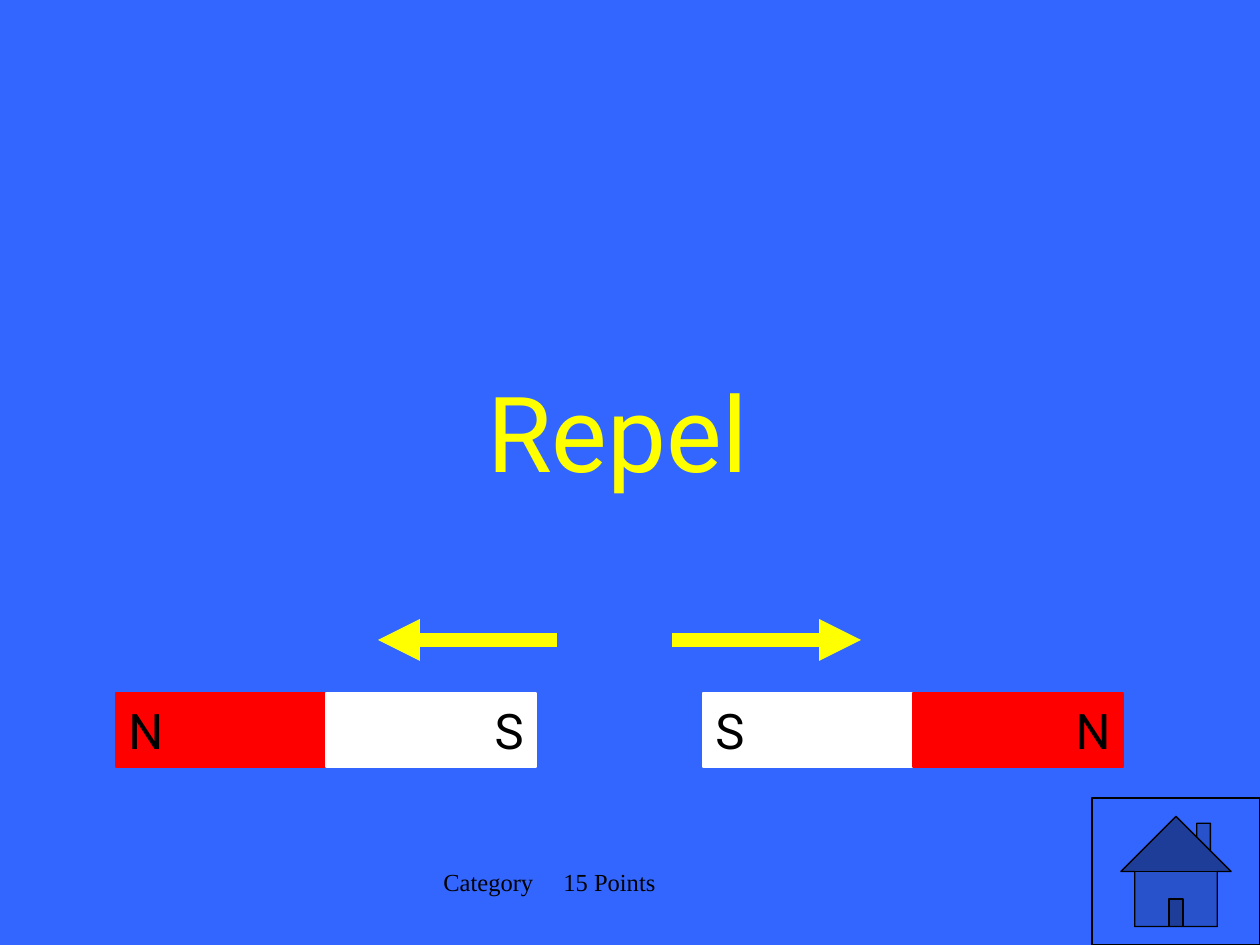
from lxml import etree
from pptx import Presentation
from pptx.dml.color import RGBColor
from pptx.enum.shapes import MSO_CONNECTOR, MSO_SHAPE
from pptx.enum.text import MSO_ANCHOR, MSO_AUTO_SIZE, PP_ALIGN
from pptx.oxml.ns import qn
from pptx.util import Emu, Pt

RECT, HOME = MSO_SHAPE.RECTANGLE, MSO_SHAPE.ACTION_BUTTON_HOME
STRAIGHT = MSO_CONNECTOR.STRAIGHT
LEFT, CENTER, RIGHT = PP_ALIGN.LEFT, PP_ALIGN.CENTER, PP_ALIGN.RIGHT
TOP, MIDDLE = MSO_ANCHOR.TOP, MSO_ANCHOR.MIDDLE
NO_FIT = MSO_AUTO_SIZE.NONE

BLUE = RGBColor(0x33, 0x66, 0xFF)
YELLOW = RGBColor(0xFF, 0xFF, 0x00)
RED = RGBColor(0xFF, 0x00, 0x00)
WHITE = RGBColor(0xFF, 0xFF, 0xFF)
BLACK = RGBColor(0x00, 0x00, 0x00)

SANS, SERIF = "Roboto", "Times New Roman"
EMU_PER_PX = 914400 / 126


def px(n):
    return Emu(round(n * EMU_PER_PX))


class Board:
    """Holds the style and the current slide."""

    styles = {
        "title": {"name": SANS, "size": Pt(60), "color": YELLOW},
        "pole": {"name": SANS, "size": Pt(28), "color": BLACK},
        "footer": {"name": SERIF, "size": Pt(14), "color": BLACK},
    }

    def __init__(self, slide):
        self.slide = slide
        fill = slide.background.fill
        fill.solid()
        fill.fore_color.rgb = BLUE

    def set_text(self, sp, text, style, align=LEFT, anchor=MIDDLE, wrap=True):
        tf = sp.text_frame
        frame = {"auto_size": NO_FIT, "word_wrap": wrap, "vertical_anchor": anchor}
        for key, value in frame.items():
            setattr(tf, key, value)
        p = tf.paragraphs[0]
        p.alignment = align
        r = p.add_run()
        r.text = text
        for key, value in self.styles[style].items():
            if key == "color":
                r.font.color.rgb = value
            else:
                setattr(r.font, key, value)
        return p

    def title(self, text, x, y, w, h):
        sp = self.slide.shapes.title
        sp.left, sp.top, sp.width, sp.height = map(px, (x, y, w, h))
        self.set_text(sp, text, "title", CENTER)

    def tabbed_text(self, text, x, y, w, h, tab):
        sp = self.slide.shapes.add_textbox(*map(px, (x, y, w, h)))
        p = self.set_text(sp, text, "footer", anchor=TOP)
        tabs = etree.SubElement(p._p.get_or_add_pPr(), qn("a:tabLst"))
        etree.SubElement(tabs, qn("a:tab"), pos=str(px(tab)), algn="l")

    def shape(self, kind, x, y, w, h, fill, line, parent=None):
        shapes = (parent or self.slide).shapes
        sp = shapes.add_shape(kind, *map(px, (x, y, w, h)))
        sp.shadow.inherit = False
        sp.fill.solid()
        sp.fill.fore_color.rgb = fill
        sp.line.color.rgb = line
        sp.line.width = Pt(0.75)
        return sp

    def magnet(self, x, y, w, h, poles):
        group = self.slide.shapes.add_group_shape()
        for i, (pole, align) in enumerate(zip(poles, (LEFT, RIGHT))):
            fill = RED if pole == "N" else WHITE
            sp = self.shape(RECT, x + i * w, y, w, h, fill, fill, group)
            self.set_text(sp, pole, "pole", align, wrap=False)

    def arrow(self, x1, x2, y):
        s = self.slide.shapes.add_connector(STRAIGHT, *map(px, (x1, y, x2, y)))
        s.line.color.rgb = YELLOW
        s.line.width = Pt(8)
        ln = s._element.spPr.find(qn("a:ln"))
        etree.SubElement(ln, qn("a:tailEnd"), type="triangle")
        etree.SubElement(s._element.spPr, qn("a:effectLst"))


def main():
    prs = Presentation()
    prs.slide_width, prs.slide_height = px(1260), px(945)
    title_only = prs.slide_layouts[5]
    board = Board(prs.slides.add_slide(title_only))

    # Footer and home button
    board.tabbed_text("Category\t15 Points", 431, 861, 399, 63, tab=120)
    board.shape(HOME, 1092, 798, 168, 147, BLUE, BLACK)

    # Answer; the closing space sets it slightly left of centre
    board.title("Repel ", 95, 84, 1071, 693)

    # Two magnets with their like poles facing
    for x, poles in ((116, "NS"), (703, "SN")):
        board.magnet(x, 693, 210, 74, poles)

    # Arrows pointing apart
    for x1, x2 in ((672, 861), (557, 378)):
        board.arrow(x1, x2, 640)

    prs.save("out.pptx")


if __name__ == "__main__":
    main()
